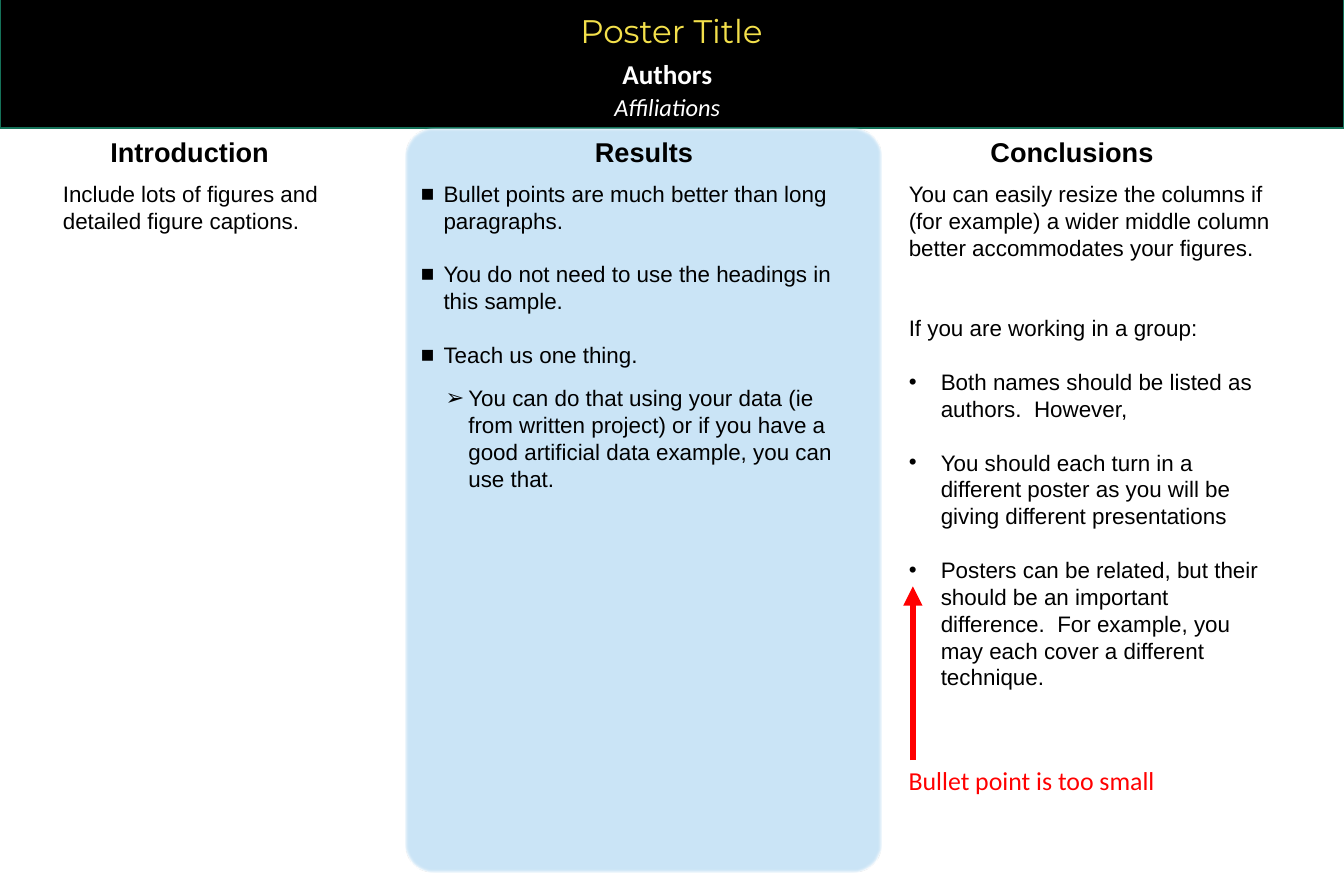
"""Build a three-column poster template with a title band and an arrowed remark."""
from lxml.etree import SubElement
from pptx import Presentation
from pptx.dml.color import RGBColor
from pptx.enum.shapes import MSO_CONNECTOR, MSO_SHAPE
from pptx.enum.text import MSO_ANCHOR, MSO_AUTO_SIZE, PP_ALIGN
from pptx.oxml.ns import qn
from pptx.util import Inches, Pt

COLORS = {
    "band": "000000", "edge": "157259", "title": "F3E04B", "light": "FFFFFF",
    "text": "000000", "panel": "CAE4F6", "alert": "FF0000",
}
BODY = 15.6
LINE = 18.7
TOP = 1.69
HEADS = [
    ("Introduction", 0.82, 2.03),
    ("Results", 5.46, 1.54),
    ("Conclusions", 9.39, 1.96),
]
INTRO = [("Include lots of figures and detailed figure captions.", 0, "")]
RESULTS = [
    ("Bullet points are much better than long paragraphs.", 0, "■"),
    ("You do not need to use the headings in this sample.", LINE, "■"),
    ("Teach us one thing.", LINE, "■"),
    ("You can do that using your data (ie from written project) or if you "
     "have a good artificial data example, you can use that.", 11.2, "➢"),
]
CLOSE = [
    ("You can easily resize the columns if (for example) a wider middle "
     "column better accommodates your figures.", 0, ""),
    ("If you are working in a group:", 2 * LINE, ""),
    ("Both names should be listed as authors.  However,", LINE, "•"),
    ("You should each turn in a different poster as you will be giving "
     "different presentations", LINE, "•"),
    ("Posters can be related, but their should be an important difference.  "
     "For example, you may each cover a different technique.", LINE, "•"),
]
INDENTS = {"": (0, 0), "■": (0.22, -0.22), "➢": (0.46, -0.22), "•": (0.31, -0.31)}


def color(name):
    return RGBColor.from_string(COLORS[name])


def place(shape, left, top, width, height):
    shape.left, shape.top = Inches(left), Inches(top)
    shape.width, shape.height = Inches(width), Inches(height)
    frame = shape.text_frame
    frame.word_wrap = True
    frame.auto_size = MSO_AUTO_SIZE.NONE
    frame.vertical_anchor = MSO_ANCHOR.TOP
    return frame


def add_box(slide, *area):
    box = slide.shapes.add_textbox(*map(Inches, area))
    return place(box, *area)


def style(para, size, tint="text", face="Arial", bold=False, slant=False):
    for run in para.runs:
        font = run.font
        font.name, font.size = face, Pt(size)
        font.bold, font.italic = bold, slant
        font.color.rgb = color(tint)


def set_mark(para, mark):
    props = para._p.get_or_add_pPr()
    left, hang = INDENTS[mark]
    props.set("marL", str(Inches(left)))
    props.set("indent", str(Inches(hang)))
    if mark:
        SubElement(props, qn("a:buFont"), typeface="Arial")
        SubElement(props, qn("a:buChar"), char=mark)
    else:
        SubElement(props, qn("a:buNone"))


def fill_list(frame, items):
    frame.text = "\n".join(text for text, _, _ in items)
    for para, (_, gap, mark) in zip(frame.paragraphs, items):
        para.level = 1 if mark == "➢" else 0
        para.alignment = PP_ALIGN.LEFT
        para.line_spacing = Pt(LINE)
        para.space_before, para.space_after = Pt(gap), Pt(0)
        set_mark(para, mark)
        style(para, BODY)


def add_block(slide, kind, area, tint):
    shape = slide.shapes.add_shape(kind, *map(Inches, area))
    shape.shadow.inherit = False
    shape.fill.solid()
    shape.fill.fore_color.rgb = color(tint)
    shape.line.fill.background()
    tree = shape.element.getparent()
    tree.insert(2, shape.element)
    return shape


def add_back(slide):
    panel = add_block(slide, MSO_SHAPE.ROUNDED_RECTANGLE, (3.92, 1.24, 4.61, 7.2), "panel")
    panel.adjustments[0] = 0.062
    effects = panel.element.spPr.find(qn("a:effectLst"))
    SubElement(effects, qn("a:softEdge"), rad=str(Pt(1)))
    band = add_block(slide, MSO_SHAPE.RECTANGLE, (0, -0.13, 13, 1.37), "band")
    band.line.color.rgb = color("edge")
    band.line.width = Pt(1)


def add_title(slide):
    frame = place(slide.shapes.title, 0.93, 0.08, 11.13, 0.46)
    frame.text = "Poster Title"
    para = frame.paragraphs[0]
    para.alignment, para.line_spacing = PP_ALIGN.CENTER, 0.95
    style(para, 22.7, "title", "Montserrat")

    frame = add_box(slide, 1.23, 0.47, 10.45, 0.75)
    frame.text = "Authors\nAffiliations"
    for para in frame.paragraphs:
        para.alignment, para.line_spacing = PP_ALIGN.CENTER, 1.1
    names, places = frame.paragraphs
    style(names, 18.9, "light", "Calibri", bold=True)
    style(places, 17, "light", "Calibri", slant=True)


def add_head(slide, text, left, width):
    frame = add_box(slide, left, 1.26, width, 0.42)
    frame.text = text
    para = frame.paragraphs[0]
    para.alignment = PP_ALIGN.CENTER
    style(para, 18.9, bold=True)


def add_remark(slide):
    frame = add_box(slide, 8.69, 7.35, 2.89, 0.4)
    frame.text = "Bullet point is too small"
    style(frame.paragraphs[0], 18, "alert", "Calibri")


def add_arrow(slide):
    ends = map(Inches, (8.83, 7.35, 8.83, 5.67))
    arrow = slide.shapes.add_connector(MSO_CONNECTOR.STRAIGHT, *ends)
    arrow.line.color.rgb = color("alert")
    arrow.line.width = Pt(4.5)
    SubElement(arrow.line._get_or_add_ln(), qn("a:tailEnd"), type="triangle")
    SubElement(arrow.element.spPr, qn("a:effectLst"))


def main():
    deck = Presentation()
    deck.slide_width, deck.slide_height = Inches(13), Inches(8.5)
    slide = deck.slides.add_slide(deck.slide_layouts[3])
    add_back(slide)
    add_title(slide)
    for head in HEADS:
        add_head(slide, *head)
    fill_list(add_box(slide, 0.51, TOP, 3.33, 0.63), INTRO)
    _, middle, right = slide.placeholders
    fill_list(place(middle, 3.97, TOP, 4.25, 3.14), RESULTS)
    fill_list(place(right, 8.69, TOP, 3.75, 6.92), CLOSE)
    add_remark(slide)
    add_arrow(slide)
    deck.save("out.pptx")


if __name__ == "__main__":
    main()
